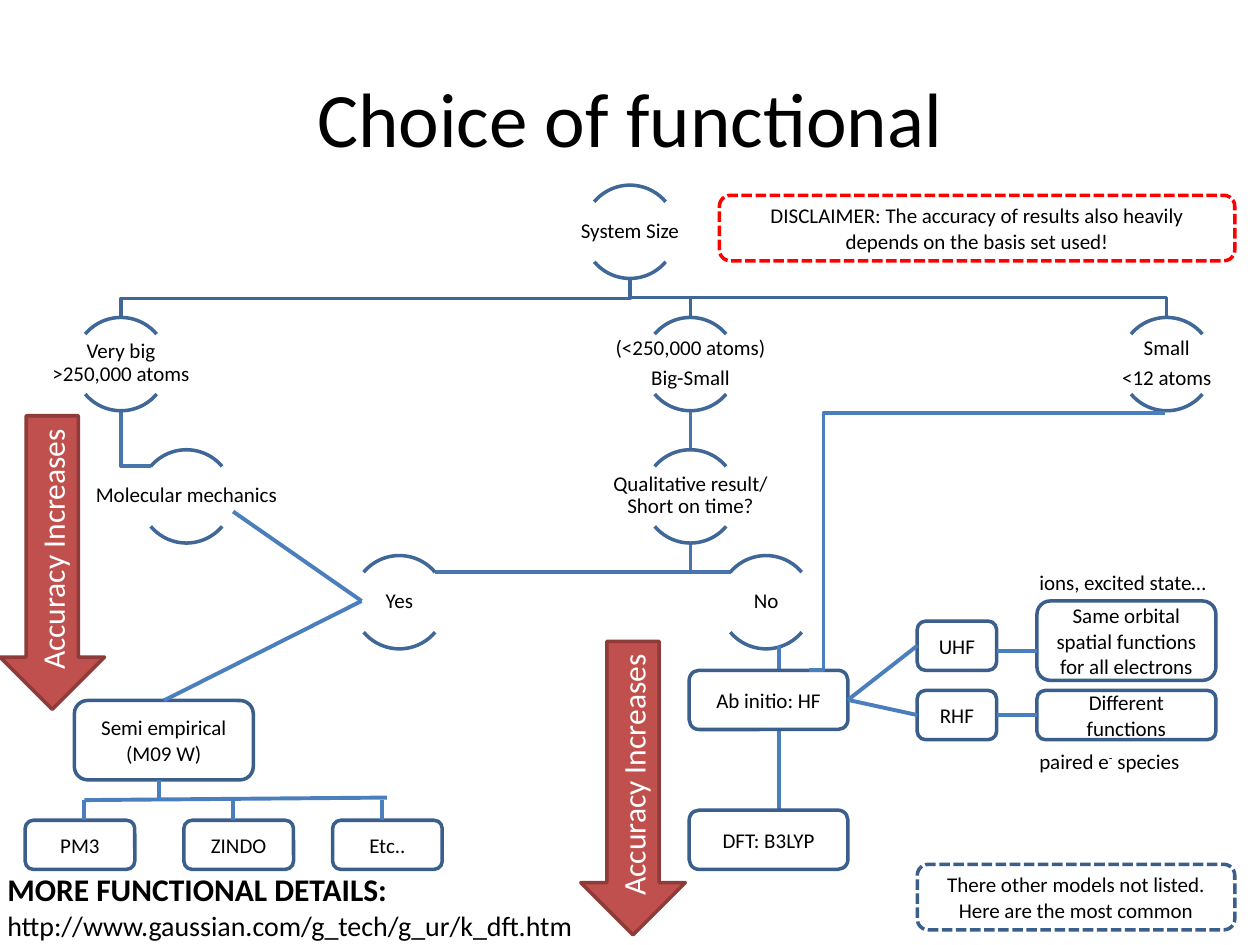
from pptx import Presentation
from pptx.dml.color import RGBColor
from pptx.enum.dml import MSO_LINE
from pptx.enum.shapes import MSO_CONNECTOR, MSO_SHAPE
from pptx.enum.text import MSO_ANCHOR, PP_ALIGN
from pptx.oxml.ns import qn
from pptx.util import Inches, Pt
from lxml.etree import SubElement

BLACK = RGBColor(0x00, 0x00, 0x00)
WHITE = RGBColor(0xFF, 0xFF, 0xFF)
RED = RGBColor(0xFF, 0x00, 0x00)
ARC_BLUE = RGBColor(0x3F, 0x67, 0x97)
BRANCH_BLUE = RGBColor(0x48, 0x75, 0xAC)
BOX_BLUE = RGBColor(0x3A, 0x5F, 0x8C)
LINK_BLUE = RGBColor(0x4B, 0x7E, 0xBC)
ARROW_RED = RGBColor(0xC0, 0x50, 0x4D)
ARROW_EDGE = RGBColor(0x8E, 0x3B, 0x39)

TOP, LEFT, BOTTOM, RIGHT = range(4)
NODE_SIZE = 0.74
ARC_ANGLES = [(132, 192), (24, 84)]
LEVELS = [1.47, 2.52, 3.57, 4.41]

# (centre x, level, paragraphs)
NODES = [
    (5, 0, ["System Size"]),
    (0.96, 1, ["Very big\v>250,000 atoms"]),
    (1.48, 2, ["Molecular mechanics"]),
    (5.48, 1, ["(<250,000 atoms)", "Big-Small"]),
    (5.48, 2, ["Qualitative result/ Short on time?"]),
    (3.17, 3, ["Yes"]),
    (6.08, 3, ["No"]),
    (9.26, 1, ["Small", "<12 atoms"]),
]

BRANCHES = [
    (ARC_BLUE, [(5, 2.21), (5, 2.36), (9.26, 2.36), (9.26, 2.52)]),
    (BRANCH_BLUE, [(5.48, 4.31), (5.48, 4.54), (5.8, 4.54)]),
    (BRANCH_BLUE, [(5.48, 4.31), (5.48, 4.54), (3.45, 4.54)]),
    (BRANCH_BLUE, [(5.48, 3.26), (5.48, 3.57)]),
    (ARC_BLUE, [(5, 2.21), (5, 2.36), (5.48, 2.36), (5.48, 2.52)]),
    (BRANCH_BLUE, [(0.96, 3.26), (0.96, 3.7), (1.2, 3.7)]),
    (ARC_BLUE, [(5, 2.21), (5, 2.37), (0.96, 2.37), (0.96, 2.52)]),
]


def format_paragraph(paragraph, align=PP_ALIGN.CENTER, size=12, color=BLACK):
    paragraph.alignment = align
    for run in paragraph.runs:
        values = {"name": "Calibri", "size": Pt(size)}
        for name, value in values.items():
            setattr(run.font, name, value)
        run.font.color.rgb = color


def style_shape(shape, line_color, fill=None, dash=None):
    shape.shadow.inherit = False
    if fill is None:
        shape.fill.background()
    else:
        shape.fill.solid()
        shape.fill.fore_color.rgb = fill
    shape.line.color.rgb = line_color
    shape.line.width = Pt(2)
    if dash is not None:
        shape.line.dash_style = dash


def add_box(slide, text, bounds, line_color=BOX_BLUE, fill=None, dash=None):
    box = slide.shapes.add_shape(MSO_SHAPE.ROUNDED_RECTANGLE, *map(Inches, bounds))
    style_shape(box, line_color, fill, dash)
    box.text_frame.vertical_anchor = MSO_ANCHOR.MIDDLE
    box.text_frame.text = text
    format_paragraph(box.text_frame.paragraphs[0])
    return box


def add_branch(slide, color, points):
    (start_x, start_y), *rest = [tuple(map(Inches, point)) for point in points]
    builder = slide.shapes.build_freeform(start_x, start_y)
    builder.add_line_segments(rest, close=False)
    style_shape(builder.convert_to_shape(), color)


def add_node(slide, center, level, lines):
    """Draw a label between an upper and a lower arc."""
    top = LEVELS[level]
    for angles in ARC_ANGLES:
        arc = slide.shapes.add_shape(
            MSO_SHAPE.ARC, Inches(center - NODE_SIZE / 2), Inches(top),
            Inches(NODE_SIZE), Inches(NODE_SIZE))
        for index, angle in enumerate(angles):
            arc.adjustments[index] = angle
        style_shape(arc, ARC_BLUE)
    label = slide.shapes.add_textbox(
        Inches(center - NODE_SIZE), Inches(top + 0.13),
        Inches(2 * NODE_SIZE), Inches(0.47))
    frame = label.text_frame
    values = {"word_wrap": True, "vertical_anchor": MSO_ANCHOR.MIDDLE}
    for side in ("left", "right", "top", "bottom"):
        values[f"margin_{side}"] = Inches(0.01)
    for name, value in values.items():
        setattr(frame, name, value)
    frame.text = "\n".join(lines)
    for paragraph in frame.paragraphs:
        paragraph.line_spacing = 0.9
        paragraph.space_after = Pt(4.2)
        format_paragraph(paragraph)


def add_link(slide, start, end, kind=MSO_CONNECTOR.STRAIGHT):
    """Join two ends, each a point or a (shape, side) pair."""
    points = [(0, 0) if hasattr(item[0], "shape_id") else item for item in (start, end)]
    link = slide.shapes.add_connector(
        kind, *(Inches(value) for point in points for value in point))
    for item, connect in ((start, link.begin_connect), (end, link.end_connect)):
        if hasattr(item[0], "shape_id"):
            connect(*item)
    link.line.color.rgb = LINK_BLUE
    link.line.width = Pt(2.25)
    SubElement(link.element.spPr, qn("a:effectLst"))
    return link


def add_note(slide, bounds, runs):
    """Add a left-aligned text box of (text, size, bold, baseline) runs."""
    note = slide.shapes.add_textbox(*map(Inches, bounds))
    note.text_frame.word_wrap = True
    paragraph = note.text_frame.paragraphs[0]
    for text, size, bold, baseline in runs:
        if text.startswith("http"):
            paragraph.add_line_break()
        run = paragraph.add_run()
        run.text = text
        format_paragraph(paragraph, PP_ALIGN.LEFT)
        run.font.bold = bold
        if baseline:
            run.font._element.set("baseline", str(baseline))
    for run, (_, size, _, _) in zip(paragraph.runs, runs):
        run.font.size = Pt(size)


def add_accuracy_arrow(slide, left, top):
    arrow = slide.shapes.add_shape(
        MSO_SHAPE.DOWN_ARROW, Inches(left), Inches(top), Inches(0.83), Inches(2.33))
    style_shape(arrow, ARROW_EDGE, ARROW_RED)
    arrow.text_frame.vertical_anchor = MSO_ANCHOR.MIDDLE
    arrow.text_frame.text = "Accuracy Increases"
    format_paragraph(arrow.text_frame.paragraphs[0], size=18, color=WHITE)
    arrow.element.find(".//" + qn("a:bodyPr")).set("vert", "vert270")


def add_title(slide, text):
    title = slide.shapes.title
    bounds = {"left": 0.5, "top": 0.3, "width": 9, "height": 1.25}
    for name, value in bounds.items():
        setattr(title, name, Inches(value))
    title.text_frame.text = text
    title.text_frame.vertical_anchor = MSO_ANCHOR.MIDDLE
    format_paragraph(title.text_frame.paragraphs[0], size=44)


def add_ab_initio_part(slide):
    rhf = add_box(slide, "RHF", (7.28, 5.48, 0.63, 0.39))
    uhf = add_box(slide, "UHF", (7.28, 4.93, 0.63, 0.39))
    add_box(slide, "Same orbital spatial functions for all electrons", (8.23, 4.77, 1.42, 0.63))
    different = add_box(slide, "Different functions", (8.23, 5.48, 1.42, 0.39))
    add_note(slide, (8.15, 4.47, 2.2, 0.3), [("ions, excited state…", 12, False, 0)])
    add_note(slide, (8.15, 5.89, 2.2, 0.3), [
        ("paired e", 12, False, 0), ("-", 12, False, 30000), (" species", 12, False, 0)])
    add_link(slide, (6.18, 5.13), (6.18, 6.86))
    hartree_fock = add_box(slide, "Ab initio: HF", (5.47, 5.32, 1.26, 0.47), fill=WHITE)
    add_box(slide, "DFT: B3LYP", (5.47, 6.43, 1.26, 0.47), fill=WHITE)
    for method in (uhf, rhf):
        add_link(slide, (method, LEFT), (hartree_fock, RIGHT))
    add_link(slide, (different, LEFT), (rhf, RIGHT))
    add_link(slide, (8.23, 5.17), (7.91, 5.17))
    elbow = add_link(slide, (9.25, 3.28), (6.42, 5.32), MSO_CONNECTOR.ELBOW)
    guides = elbow.element.spPr.find(".//" + qn("a:avLst"))
    SubElement(guides, qn("a:gd"), name="adj1", fmla="val 95900")


def add_semi_empirical_part(slide):
    yes_side = (2.87, 4.77)
    add_link(slide, yes_side, (1.85, 4.06))
    semi_empirical = add_box(slide, "Semi empirical (M09 W)", (0.59, 5.56, 1.42, 0.63))
    for text, left in (("PM3", 0.2), ("ZINDO", 1.46), ("Etc..", 2.64)):
        add_box(slide, text, (left, 6.51, 0.87, 0.39))
    add_link(slide, yes_side, (semi_empirical, TOP))
    add_link(slide, (3.07, 6.33), (0.67, 6.35))
    add_link(slide, (1.26, 6.35), (1.26, 6.19))
    for x in (0.67, 1.85, 3.03):
        add_link(slide, (x, 6.51), (x, 6.35))


def main():
    presentation = Presentation()
    presentation.slide_width, presentation.slide_height = Inches(10), Inches(7.5)
    slide = presentation.slides.add_slide(presentation.slide_layouts[5])
    add_title(slide, "Choice of functional")
    for color, points in BRANCHES:
        add_branch(slide, color, points)
    for node in NODES:
        add_node(slide, *node)
    add_ab_initio_part(slide)
    add_semi_empirical_part(slide)
    add_box(slide, "There other models not listed. Here are the most common",
            (7.28, 6.86, 2.52, 0.52), dash=MSO_LINE.SQUARE_DOT)
    add_box(slide, "DISCLAIMER: The accuracy of results also heavily depends on the basis set used!",
            (5.71, 1.55, 4.09, 0.52), RED, dash=MSO_LINE.SQUARE_DOT)
    add_accuracy_arrow(slide, 4.61, 5.09)
    add_accuracy_arrow(slide, 0, 3.3)
    add_note(slide, (-0.04, 6.86, 6.77, 0.67), [
        ("MORE FUNCTIONAL DETAILS:", 18, True, 0),
        ("http://www.gaussian.com/g_tech/g_ur/k_dft.htm", 16, False, 0)])
    presentation.save("out.pptx")


if __name__ == "__main__":
    main()
